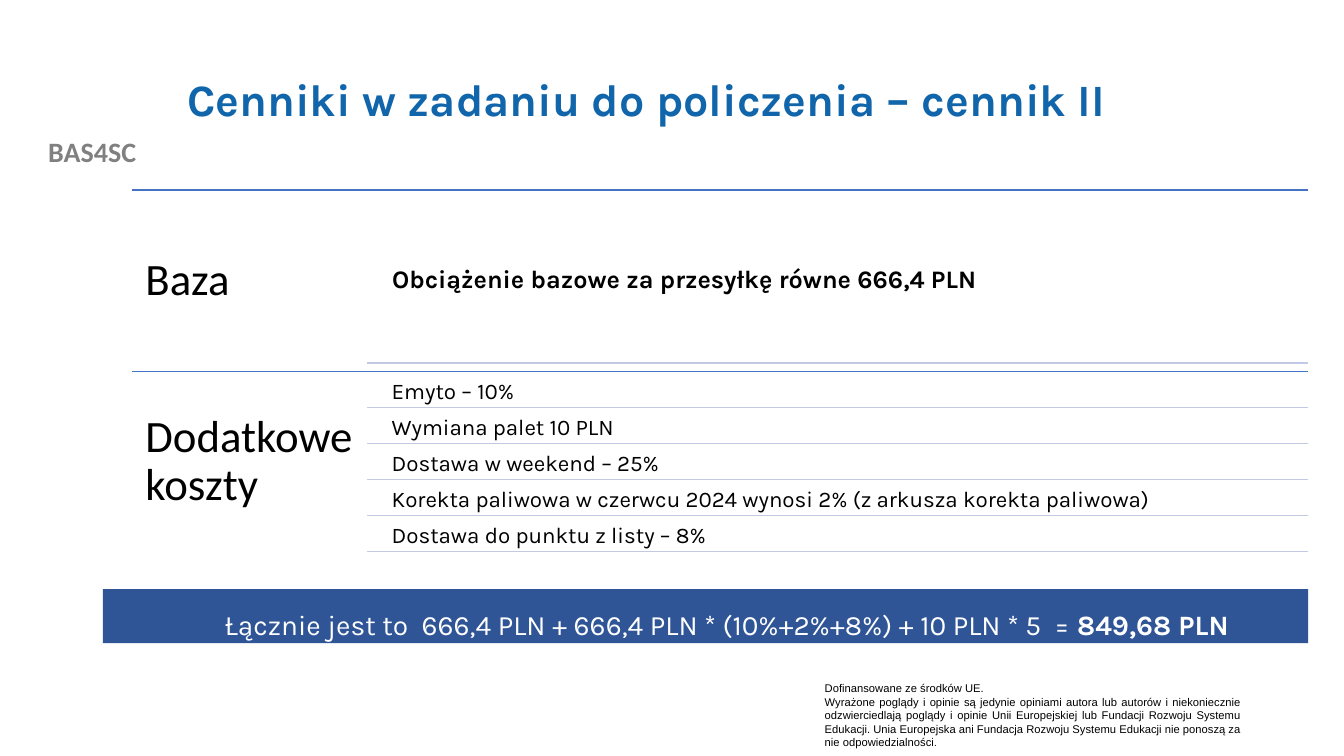
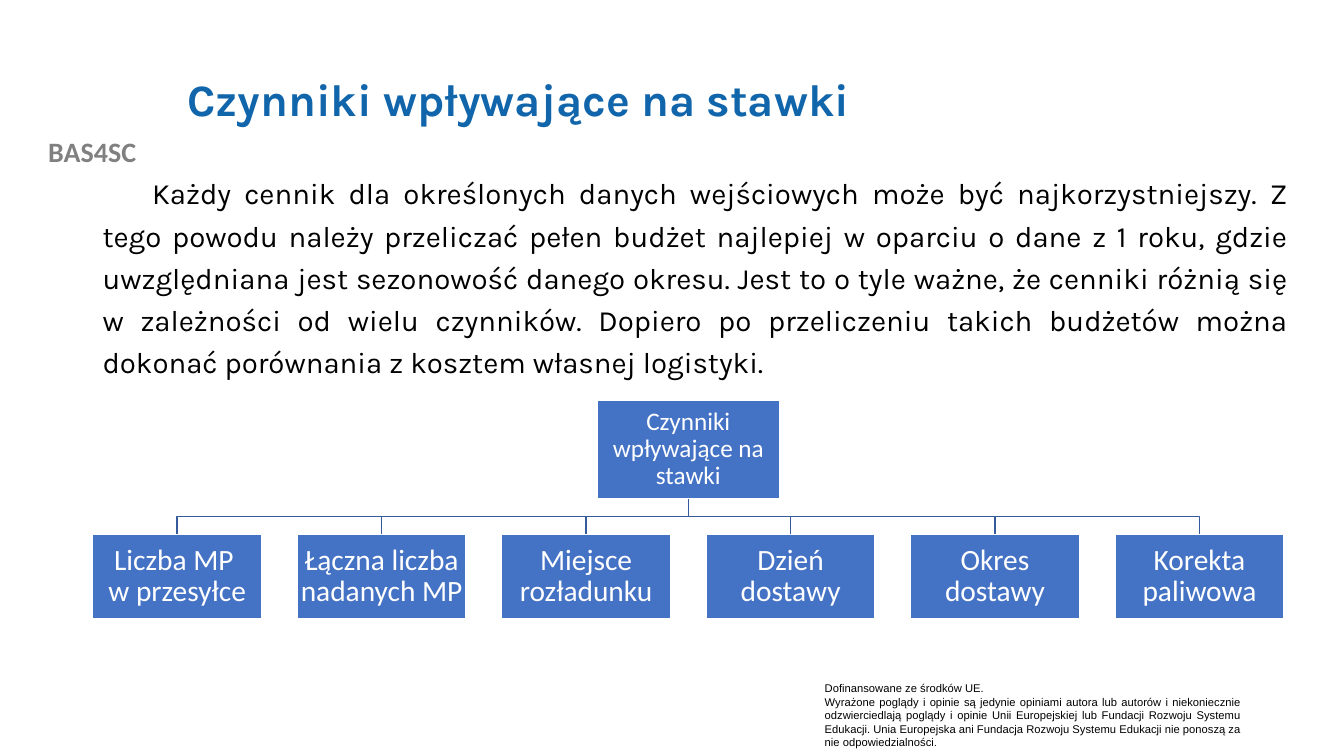
"""Builds two slides on freight price lists: a worked price and the factors behind rates."""
from lxml import etree
from pptx import Presentation
from pptx.dml.color import RGBColor
from pptx.enum.shapes import MSO_CONNECTOR, MSO_SHAPE
from pptx.enum.text import MSO_ANCHOR, PP_ALIGN
from pptx.oxml.ns import qn
from pptx.util import Pt

STRAIGHT = MSO_CONNECTOR.STRAIGHT
RECTANGLE = MSO_SHAPE.RECTANGLE
TOP, MIDDLE = MSO_ANCHOR.TOP, MSO_ANCHOR.MIDDLE
LEFT, CENTER, JUSTIFY = PP_ALIGN.LEFT, PP_ALIGN.CENTER, PP_ALIGN.JUSTIFY

HEADING, BODY, SMALL = "Karla", "Calibri", "Arial"
TITLE_BLUE, BLUE, DARK_BLUE = "1065AB", "4472C4", "2F5597"
BRANCH_BLUE, PALE_BLUE = "365B9D", "C1C9E4"
GRAY, BLACK, WHITE = "808080", "000000", "FFFFFF"
FIRST_LINE_INDENT = 35.4

TITLES = ["Cenniki w zadaniu do policzenia – cennik II", "Czynniki wpływające na stawki"]
DISCLAIMER = [
    "Dofinansowane ze środków UE.",
    "Wyrażone poglądy i opinie są jedynie opiniami autora lub autorów i niekoniecznie "
    "odzwierciedlają poglądy i opinie Unii Europejskiej lub Fundacji Rozwoju Systemu Edukacji. "
    "Unia Europejska ani Fundacja Rozwoju Systemu Edukacji nie ponoszą za nie odpowiedzialności",
]
EXTRA_COSTS = [
    "Emyto – 10%",
    "Wymiana palet 10 PLN",
    "Dostawa w weekend – 25%",
    "Korekta paliwowa w czerwcu 2024 wynosi 2% (z arkusza korekta paliwowa)",
    "Dostawa do punktu z listy – 8%",
]
EXPLANATION = (
    "Każdy cennik dla określonych danych wejściowych może być najkorzystniejszy. Z tego powodu "
    "należy przeliczać pełen budżet najlepiej w oparciu o dane z 1 roku, gdzie uwzględniana jest "
    "sezonowość danego okresu. Jest to o tyle ważne, że cenniki różnią się w zależności od wielu "
    "czynników. Dopiero po przeliczeniu takich budżetów można dokonać porównania z kosztem "
    "własnej logistyki."
)
FACTORS = ["Liczba MP \nw przesyłce", "Łączna liczba nadanych MP", "Miejsce rozładunku",
           "Dzień dostawy", "Okres dostawy", "Korekta paliwowa"]


def add_text(slide, box, texts, size, font, color=BLACK, fill=None, outline=None, bold=False,
             align=LEFT, anchor=TOP, spacing=1.0, indent=0, inset=None):
    """Adds a text box, or a rectangle when a fill is given, and returns its last paragraph."""
    lengths = [Pt(length) for length in box]
    if fill:
        shape = slide.shapes.add_shape(RECTANGLE, *lengths)
        shape.shadow.inherit = False
        shape.fill.solid()
        shape.fill.fore_color.rgb = RGBColor.from_string(fill)
        if outline:
            shape.line.color.rgb = RGBColor.from_string(outline)
            shape.line.width = Pt(1)
        else:
            shape.line.fill.background()
    else:
        shape = slide.shapes.add_textbox(*lengths)
    frame = shape.text_frame
    frame.word_wrap = True
    frame.vertical_anchor = anchor
    if inset is not None:
        frame.margin_left = frame.margin_right = Pt(inset)
        frame.margin_top = frame.margin_bottom = Pt(inset)
    for number, text in enumerate(texts):
        paragraph = frame.add_paragraph() if number else frame.paragraphs[0]
        paragraph.text = text
        paragraph.alignment = align
        paragraph.line_spacing = spacing
        if indent:
            paragraph._p.get_or_add_pPr().set("indent", str(Pt(indent)))
        paragraph.font.name = font
        paragraph.font.size = Pt(size)
        paragraph.font.bold = bold
        paragraph.font.color.rgb = RGBColor.from_string(color)
    return paragraph


def add_line(slide, start_x, start_y, end_x, end_y, color):
    """Adds a straight one-point line."""
    line = slide.shapes.add_connector(STRAIGHT, Pt(start_x), Pt(start_y), Pt(end_x), Pt(end_y))
    line.line.color.rgb = RGBColor.from_string(color)
    line.line.width = Pt(1)
    etree.SubElement(line._element.spPr, qn("a:effectLst"))


presentation = Presentation()
presentation.slide_width = Pt(960)
presentation.slide_height = Pt(540)

for title in TITLES:
    slide = presentation.slides.add_slide(presentation.slide_layouts[6])
    add_text(slide, (0, 92.2, 131.8, 31.7), ["BAS4SC"], 20, BODY, GRAY, bold=True, align=CENTER)
    disclaimer = add_text(slide, (582, 483.4, 311.8, 55.4), DISCLAIMER, 8, SMALL, align=JUSTIFY)
    full_stop = disclaimer.add_run()
    full_stop.text = "."
    full_stop.font.size = Pt(7)
    add_text(slide, (126.7, 28.8, 767.5, 87.8), [title], 32, HEADING, TITLE_BLUE, bold=True,
             anchor=MIDDLE, spacing=0.9)

price_slide, factor_slide = presentation.slides

total = add_text(price_slide, (73.5, 420.9, 861, 38.6),
                 ["Łącznie jest to  666,4 PLN + 666,4 PLN * (10%+2%+8%) + 10 PLN * 5  = "],
                 20, HEADING, WHITE, fill=DARK_BLUE, align=CENTER, anchor=MIDDLE, spacing=1.5,
                 indent=FIRST_LINE_INDENT)
result = total.add_run()
result.text = "849,68 PLN "
result.font.bold = True

section_left, section_top, section_height, right = 94.3, 135.6, 129.6, 934.6
detail_left, rule_left = 275, 262.1
detail_width = right - detail_left
for number, name in enumerate(["Baza", "Dodatkowe koszty"]):
    top = section_top + number * section_height
    add_line(price_slide, section_left, top, right, top, BLUE)
    add_text(price_slide, (section_left, top, 167.8, section_height), [name], 32, BODY,
             anchor=MIDDLE, spacing=0.9, inset=9.6)

add_text(price_slide, (detail_left, 141.1, detail_width, 118.1),
         ["Obciążenie bazowe za przesyłkę równe 666,4 PLN"], 18, HEADING, bold=True,
         anchor=MIDDLE, spacing=0.9, inset=5.2)
add_line(price_slide, rule_left, 259.2, right, 259.2, PALE_BLUE)

row_height, row_pitch = 24.5, 25.7
for number, cost in enumerate(EXTRA_COSTS):
    top = 266.6 + number * row_pitch
    add_text(price_slide, (detail_left, top, detail_width, row_height), [cost], 16, HEADING,
             spacing=0.9, inset=4.8)
    add_line(price_slide, rule_left, top + row_height, right, top + row_height, PALE_BLUE)

add_text(factor_slide, (66.2, 116.7, 861, 157), [EXPLANATION], 21, HEADING, align=JUSTIFY,
         spacing=1.2, indent=FIRST_LINE_INDENT)

factor_left, factor_top, factor_width, factor_height, factor_pitch = 66.2, 381.6, 120.8, 60.4, 146.04
root_top, root_width, root_height = 285.6, 130.4, 70.6
root_bottom, branch_y = root_top + root_height, 368.9
centers = [factor_left + factor_width / 2 + number * factor_pitch for number in range(len(FACTORS))]
root_center = (centers[0] + centers[-1]) / 2

for center in reversed(centers):
    builder = factor_slide.shapes.build_freeform(Pt(root_center), Pt(root_bottom))
    corners = [(root_center, branch_y), (center, branch_y), (center, factor_top)]
    builder.add_line_segments([(Pt(x), Pt(y)) for x, y in corners], close=False)
    branch = builder.convert_to_shape()
    branch.shadow.inherit = False
    branch.fill.background()
    branch.line.color.rgb = RGBColor.from_string(BRANCH_BLUE)
    branch.line.width = Pt(1)

node_style = {"font": BODY, "color": WHITE, "fill": BLUE, "outline": WHITE, "align": CENTER,
              "anchor": MIDDLE, "spacing": 0.9, "inset": 0.9}
add_text(factor_slide, (root_center - root_width / 2, root_top, root_width, root_height),
         ["Czynniki wpływające na stawki"], 18, **node_style)
for center, factor in zip(centers, FACTORS):
    add_text(factor_slide, (center - factor_width / 2, factor_top, factor_width, factor_height),
             [factor], 21, **node_style)

presentation.save("out.pptx")
